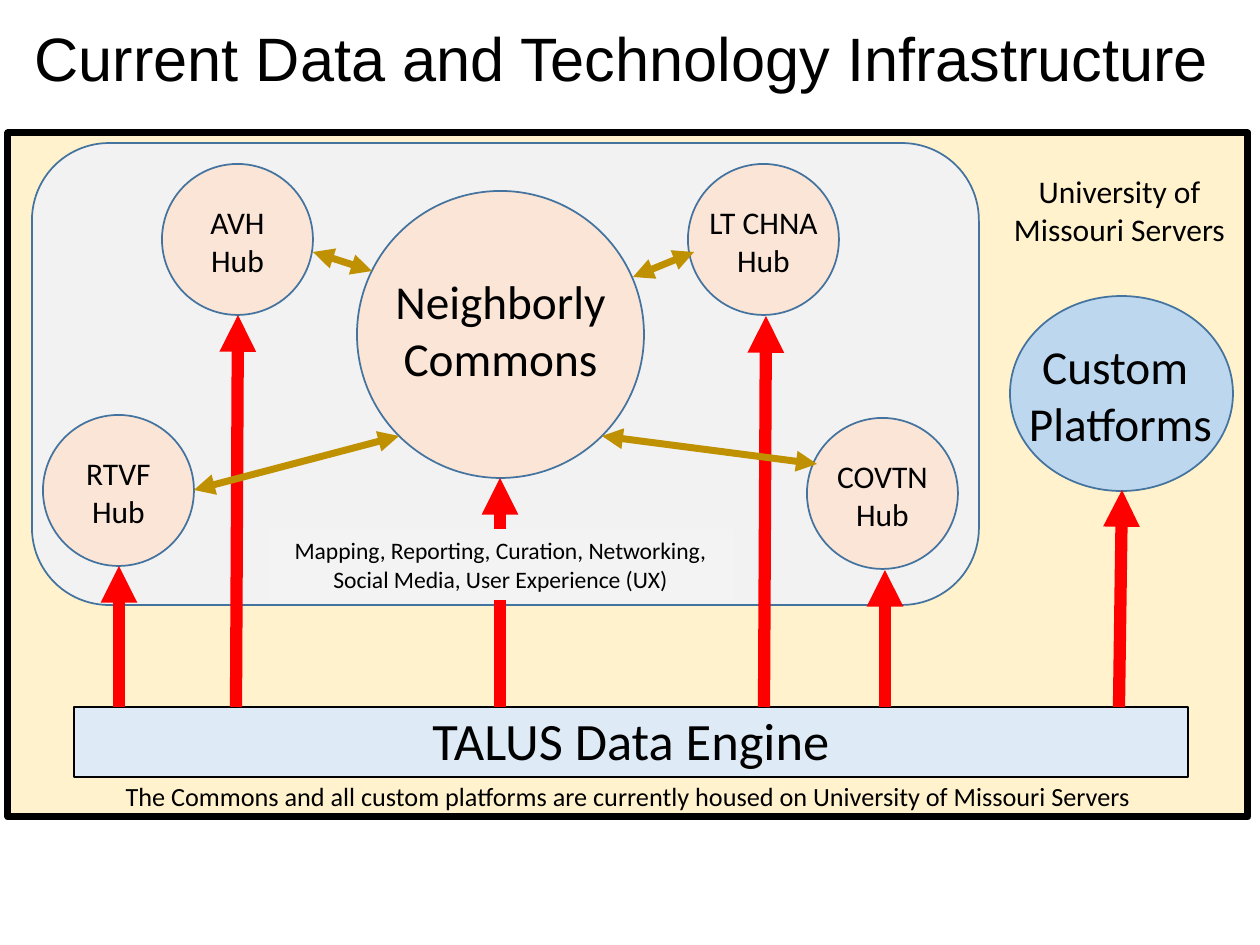
from dataclasses import dataclass

from lxml.etree import SubElement
from pptx import Presentation
from pptx.dml.color import RGBColor
from pptx.enum.shapes import MSO_CONNECTOR, MSO_SHAPE
from pptx.enum.text import MSO_ANCHOR, MSO_AUTO_SIZE, PP_ALIGN
from pptx.oxml.ns import qn
from pptx.util import Emu, Pt

SCALE = 914400 / 126
HUB = 151
BASE = 707

COLORS = {
    "black": "000000",
    "cream": "FFF2CC",
    "ice": "DEEBF7",
    "sky": "BDD7EE",
    "edge": "43739E",
    "gray": "F2F2F2",
    "mist": "F3F3F3",
    "peach": "FBE5D6",
    "red": "FF0000",
    "gold": "BF9000",
}


@dataclass
class Box:
    left: int
    top: int
    width: int
    height: int


@dataclass
class Hub:
    name: str
    left: int
    top: int


@dataclass
class Arrow:
    x1: int
    y1: int
    x2: int
    y2: int


HUBS = [
    Hub("LT CHNA", 688, 164),
    Hub("RTVF", 43, 415),
    Hub("AVH", 162, 164),
    Hub("COVTN", 807, 418),
]
FEEDS = [
    Arrow(500, BASE, 500, 478),
    Arrow(236, BASE, 238, 315),
    Arrow(119, BASE, 119, 566),
    Arrow(764, BASE, 766, 316),
    Arrow(885, BASE, 885, 570),
]
LINKS = [
    Arrow(694, 252, 633, 277),
    Arrow(817, 464, 602, 436),
    Arrow(399, 436, 194, 490),
    Arrow(372, 271, 313, 252),
]


def px(size: int) -> Emu:
    return Emu(round(size * SCALE))


def color(name: str) -> RGBColor:
    return RGBColor.from_string(COLORS[name])


def place(box: Box) -> list:
    return [px(n) for n in (box.left, box.top, box.width, box.height)]


def shape(slide, kind, box: Box, fill: str, line: str = "", weight: float = 1):
    item = slide.shapes.add_shape(kind, *place(box))
    item.shadow.inherit = False
    item.fill.solid()
    item.fill.fore_color.rgb = color(fill)
    if line:
        item.line.color.rgb = color(line)
        item.line.width = Pt(weight)
    else:
        item.line.fill.background()
    return item


def write(item, text: str, size: float, font: str = "Calibri") -> None:
    frame = item.text_frame
    frame.word_wrap = True
    frame.auto_size = MSO_AUTO_SIZE.SHAPE_TO_FIT_TEXT
    frame.text = text
    for para in frame.paragraphs:
        para.alignment = PP_ALIGN.CENTER
        for run in para.runs:
            run.font.size = Pt(size)
            run.font.name = font
            run.font.color.rgb = color("black")


def label(slide, box: Box, text: str, size: float, font: str = "Calibri") -> None:
    item = slide.shapes.add_textbox(*place(box))
    write(item, text, size, font)


def node(slide, hub: Hub) -> None:
    circle = Box(hub.left, hub.top, HUB, HUB)
    shape(slide, MSO_SHAPE.OVAL, circle, "peach", "edge")
    label(slide, Box(hub.left + 5, hub.top + 33, HUB - 10, 89), f"{hub.name}\nHub", 18)


def draw(slide, arrow: Arrow, hue: str, weight: float, ends: tuple[str, ...]) -> None:
    points = [px(n) for n in (arrow.x1, arrow.y1, arrow.x2, arrow.y2)]
    item = slide.shapes.add_connector(MSO_CONNECTOR.STRAIGHT, *points)
    item.line.color.rgb = color(hue)
    item.line.width = Pt(weight)
    props = item.line._get_or_add_ln()
    for end in ends:
        SubElement(props, qn(f"a:{end}"), type="triangle")
    SubElement(item._element.spPr, qn("a:effectLst"))


def feed(slide, arrow: Arrow) -> None:
    draw(slide, arrow, "red", 7, ("tailEnd",))


def link(slide, arrow: Arrow) -> None:
    draw(slide, arrow, "gold", 4, ("headEnd", "tailEnd"))


def main() -> None:
    """Build the data and technology infrastructure slide."""
    deck = Presentation()
    deck.slide_width, deck.slide_height = px(1260), px(945)
    slide = deck.slides.add_slide(deck.slide_layouts[6])

    shape(slide, MSO_SHAPE.RECTANGLE, Box(8, 133, 1240, 684), "cream", "black", 4)
    note = "The Commons and all custom platforms are currently housed on University of Missouri Servers"
    label(slide, Box(8, 774, 1240, 44), note, 15)
    label(slide, Box(983, 166, 273, 89), "University of Missouri Servers", 18)

    shape(slide, MSO_SHAPE.RECTANGLE, Box(74, BASE, 1114, 70), "ice", "black")
    label(slide, Box(74, 702, 1114, 77), "TALUS Data Engine", 30)

    shape(slide, MSO_SHAPE.OVAL, Box(1010, 296, 223, 195), "sky", "edge")
    label(slide, Box(977, 331, 287, 127), "Custom \nPlatforms", 27)
    feed(slide, Arrow(1119, BASE, 1122, 490))

    shape(slide, MSO_SHAPE.ROUNDED_RECTANGLE, Box(32, 143, 947, 462), "gray", "edge")
    shape(slide, MSO_SHAPE.OVAL, Box(357, 191, 287, 287), "peach", "edge")
    label(slide, Box(357, 266, 287, 127), "Neighborly\nCommons", 27)

    for hub in HUBS:
        node(slide, hub)
    for arrow in FEEDS:
        feed(slide, arrow)
    for arrow in LINKS:
        link(slide, arrow)

    tools = shape(slide, MSO_SHAPE.RECTANGLE, Box(267, 529, 467, 71), "mist")
    text = "Mapping, Reporting, Curation, Networking, Social Media, User Experience (UX)"
    write(tools, text, 13.5)
    tools.text_frame.vertical_anchor = MSO_ANCHOR.MIDDLE

    title = "Current Data and Technology Infrastructure"
    label(slide, Box(-8, 14, 1260, 89), title, 35, "Arial")
    deck.save("out.pptx")


if __name__ == "__main__":
    main()
